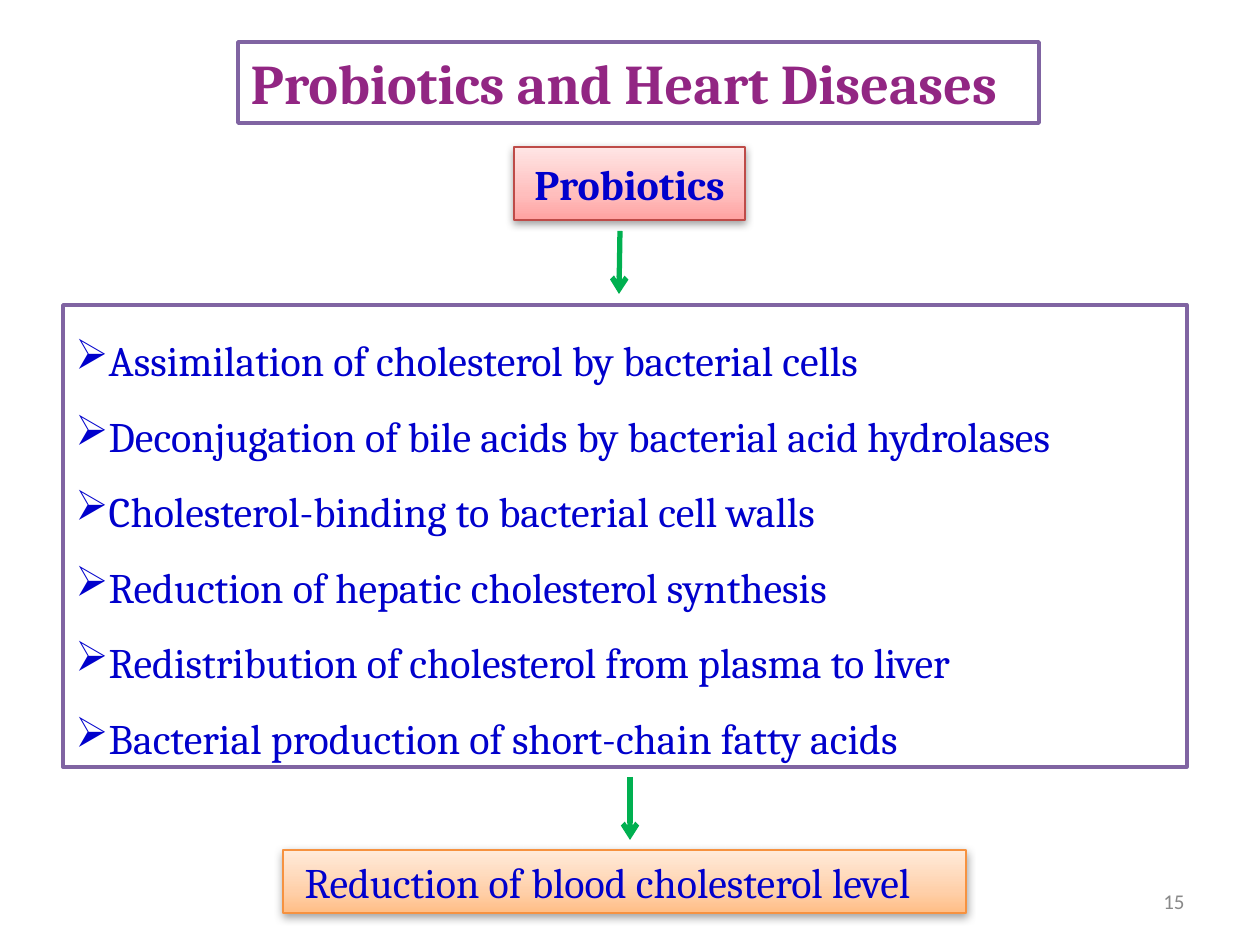
"""Builds a slide on how probiotics lower blood cholesterol."""
from lxml.etree import SubElement
from pptx import Presentation
from pptx.dml.color import RGBColor
from pptx.enum.shapes import MSO_CONNECTOR, MSO_SHAPE
from pptx.enum.text import MSO_ANCHOR, MSO_AUTO_SIZE, PP_ALIGN
from pptx.oxml.ns import qn
from pptx.util import Emu, Pt

TITLE = "Probiotics and Heart Diseases"
MECHANISMS = [
    "Assimilation of cholesterol by bacterial cells",
    "Deconjugation of bile acids by bacterial acid hydrolases",
    "Cholesterol-binding to bacterial cell walls",
    "Reduction of hepatic cholesterol synthesis",
    "Redistribution of cholesterol from plasma to liver",
    "Bacterial production of short-chain fatty acids",
]
SOURCE = {
    "text": "Probiotics", "place": (514, 147, 231, 73), "line": "BE4B48",
    "stops": [(0, "FFA2A1"), (35, "FFBEBD"), (100, "FFE5E5")],
    "format": {"bold": True, "align": PP_ALIGN.CENTER},
}
OUTCOME = {
    "text": " Reduction of blood cholesterol level", "place": (283, 850, 683, 63), "line": "F69240",
    "stops": [(0, "FFBE86"), (35, "FFD0AA"), (100, "FFEBDB")],
    "format": {"align": PP_ALIGN.JUSTIFY},
}
ARROWS = [((620, 231), (619, 294)), ((630, 777), (630, 840))]
PAGE_NUMBER = "15"
BLUE, PURPLE, GREEN, GREY = "0000CC", "8064A2", "00B050", "898989"
INDENT = 33


def px(length):
    return Emu(round(length * 914400 / 126))


def color(value):
    return RGBColor.from_string(value)


def add(parent, tag, **attributes):
    return SubElement(parent, qn(tag), {name: str(value) for name, value in attributes.items()})


def place(shape, left, top, width, height):
    shape.left, shape.top, shape.width, shape.height = map(px, (left, top, width, height))


def write(shape, lines, size=24, font="Cambria", fill=BLUE, bold=False, align=PP_ALIGN.LEFT,
          anchor=MSO_ANCHOR.MIDDLE, wrap=True, spacing=1.0, bullet=None):
    frame = shape.text_frame
    frame.text = "\n".join(lines)
    frame.auto_size = MSO_AUTO_SIZE.NONE
    frame.word_wrap, frame.vertical_anchor = wrap, anchor
    for para in frame.paragraphs:
        para.alignment, para.line_spacing = align, spacing
        if bullet:
            properties = para._p.get_or_add_pPr()
            properties.set("marL", str(px(INDENT)))
            properties.set("indent", str(-px(INDENT)))
            add(properties, "a:buChar", char=bullet)
        for span in para.runs:
            span.font.size, span.font.name, span.font.bold = Pt(size), font, bold
            span.font.color.rgb = color(fill)


def outline(shape, line, width):
    shape.line.color.rgb = color(line)
    shape.line.width = Pt(width)


def frame_white(shape):
    shape.fill.solid()
    shape.fill.fore_color.rgb = color("FFFFFF")
    outline(shape, PURPLE, 2)


def add_box(page, area):
    box = page.shapes.add_shape(MSO_SHAPE.RECTANGLE, *map(px, area))
    box.shadow.inherit = False
    return box


def add_gradient_box(page, content):
    box = add_box(page, content["place"])
    box.fill.gradient()
    box.fill.gradient_angle = 90
    properties = box._element.spPr
    stop_list = properties.find(qn("a:gradFill")).find(qn("a:gsLst"))
    for stop in list(stop_list):
        stop_list.remove(stop)
    for position, value in content["stops"]:
        stop = add(stop_list, "a:gs", pos=position * 1000)
        add(stop, "a:srgbClr", val=value)
    outline(box, content["line"], 0.75)
    shadow = add(properties.find(qn("a:effectLst")), "a:outerShdw", blurRad=Pt(5), dist=Pt(1.6),
                 dir=90 * 60000, rotWithShape=0)
    add(add(shadow, "a:srgbClr", val="000000"), "a:alpha", val=38000)
    write(box, [content["text"]], **content["format"])


def add_arrow(page, start, end):
    arrow = page.shapes.add_connector(MSO_CONNECTOR.STRAIGHT, *map(px, start + end))
    outline(arrow, GREEN, 3)
    add(arrow.line._get_or_add_ln(), "a:tailEnd", type="arrow")
    add(arrow._element.spPr, "a:effectLst")


def main():
    deck = Presentation()
    deck.slide_width, deck.slide_height = px(1260), px(945)
    page = deck.slides.add_slide(deck.slide_layouts[5])

    title = page.shapes.title
    place(title, 238, 42, 801, 81)
    frame_white(title)
    write(title, [TITLE], size=32, fill="922683", bold=True, anchor=MSO_ANCHOR.TOP, wrap=False)

    mechanisms = add_box(page, (63, 305, 1124, 462))
    frame_white(mechanisms)
    write(mechanisms, MECHANISMS, align=PP_ALIGN.JUSTIFY, spacing=1.5, bullet="➢")

    for content in (SOURCE, OUTCOME):
        add_gradient_box(page, content)
    for start, end in ARROWS:
        add_arrow(page, start, end)

    number = page.shapes.add_textbox(*map(px, (903, 876, 294, 50)))
    write(number, [PAGE_NUMBER], size=12, font="Calibri", fill=GREY, align=PP_ALIGN.RIGHT)
    deck.save("out.pptx")


if __name__ == "__main__":
    main()
